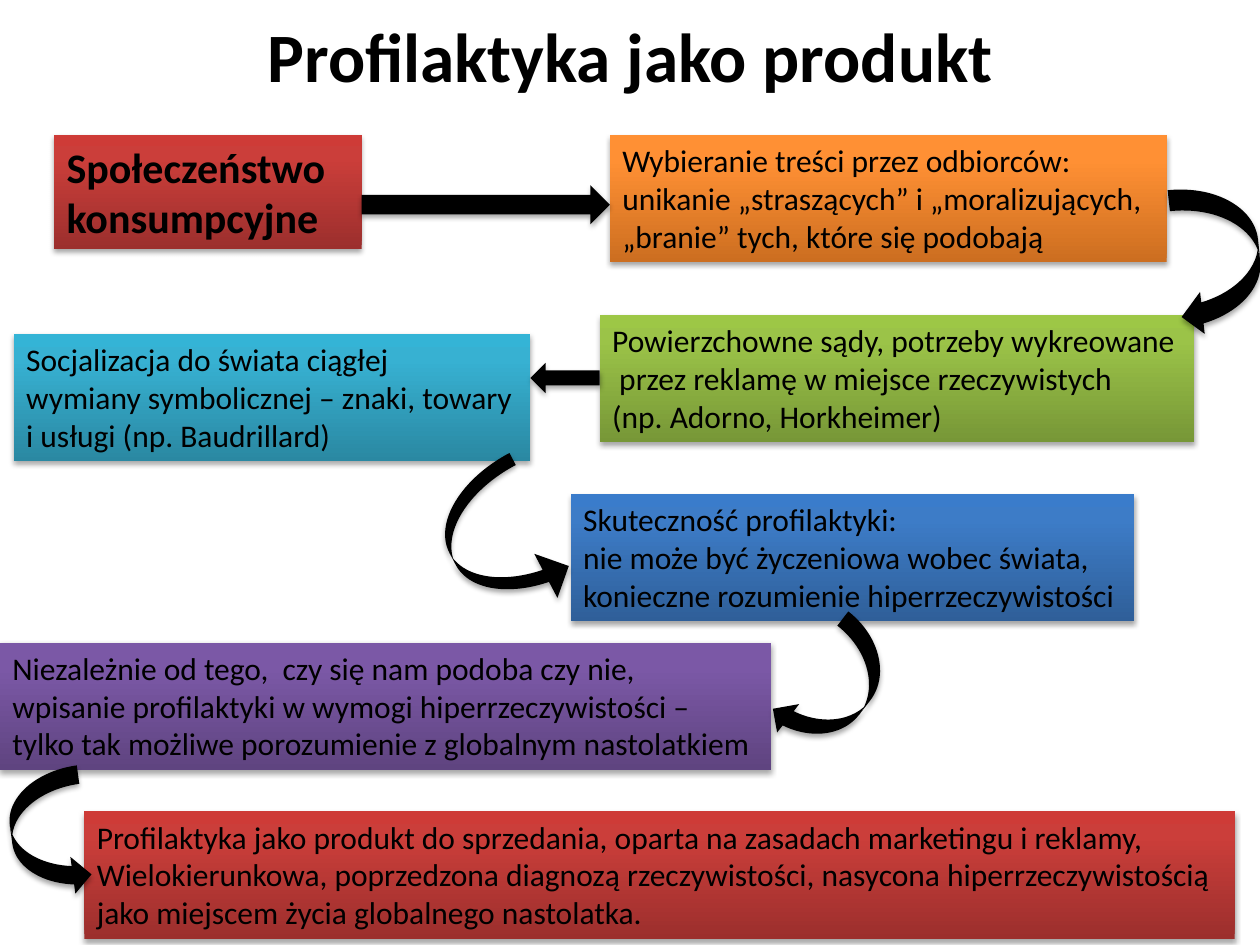
import copy

import pptx
import pptx.dml.color
import pptx.enum.shapes
import pptx.enum.text
import pptx.util
from lxml import etree
from pptx.oxml.ns import qn

Inches = pptx.util.Inches
Pt = pptx.util.Pt
RGBColor = pptx.dml.color.RGBColor
MSO_SHAPE = pptx.enum.shapes.MSO_SHAPE
MSO_ANCHOR = pptx.enum.text.MSO_ANCHOR
MSO_AUTO_SIZE = pptx.enum.text.MSO_AUTO_SIZE
PP_ALIGN = pptx.enum.text.PP_ALIGN

FONT = "Calibri"
BLACK = RGBColor(0x00, 0x00, 0x00)

# Gradients from bottom to top, with stops at STOP_POSITIONS
STOP_POSITIONS = (0, 0.8, 1)
RED = (RGBColor(0x9C, 0x2F, 0x2D), RGBColor(0xCB, 0x3E, 0x3A), RGBColor(0xCE, 0x3B, 0x37))
ORANGE = (RGBColor(0xCC, 0x6E, 0x20), RGBColor(0xFF, 0x90, 0x34), RGBColor(0xFF, 0x91, 0x36))
GREEN = (RGBColor(0x77, 0x97, 0x37), RGBColor(0x9B, 0xC3, 0x48), RGBColor(0x9D, 0xC7, 0x46))
TEAL = (RGBColor(0x2A, 0x88, 0xA2), RGBColor(0x37, 0xB1, 0xD2), RGBColor(0x34, 0xB4, 0xD6))
BLUE = (RGBColor(0x2F, 0x5F, 0x99), RGBColor(0x3D, 0x7C, 0xC7), RGBColor(0x3A, 0x7C, 0xCB))
PURPLE = (RGBColor(0x5F, 0x44, 0x80), RGBColor(0x7B, 0x58, 0xA6), RGBColor(0x7C, 0x57, 0xA8))

# Statements: box (left, top, width, height), gradient, lines
STATEMENTS = [
    ((4.84, 1.07, 4.42, 1.01), ORANGE, [
        "Wybieranie treści przez odbiorców:",
        "unikanie „straszących” i „moralizujących,",
        "„branie” tych, które się podobają"]),
    ((4.76, 2.5, 4.72, 1.01), GREEN, [
        "Powierzchowne sądy, potrzeby wykreowane",
        " przez reklamę w miejsce rzeczywistych",
        "(np. Adorno, Horkheimer)"]),
    ((0.11, 2.65, 4.1, 1.01), TEAL, [
        "Socjalizacja do świata ciągłej",
        "wymiany symbolicznej – znaki, towary",
        "i usługi (np. Baudrillard)"]),
    ((4.53, 3.92, 4.47, 1.01), BLUE, [
        "Skuteczność profilaktyki:",
        "nie może być życzeniowa wobec świata,",
        "konieczne rozumienie hiperrzeczywistości"]),
    ((0, 5.1, 6.12, 1.01), PURPLE, [
        "Niezależnie od tego,  czy się nam podoba czy nie,",
        "wpisanie profilaktyki w wymogi hiperrzeczywistości –",
        "tylko tak możliwe porozumienie z globalnym nastolatkiem"]),
    ((0.67, 6.44, 9.13, 1.01), RED, [
        "Profilaktyka jako produkt do sprzedania, oparta na zasadach marketingu i reklamy,",
        "Wielokierunkowa, poprzedzona diagnozą rzeczywistości, nasycona hiperrzeczywistością",
        "jako miejscem życia globalnego nastolatka."]),
]

# Arrows: preset, box, rotation in degrees, first adjustment (None keeps the default)
ARROWS = [
    (MSO_SHAPE.RIGHT_ARROW, (2.87, 1.47, 1.97, 0.31), 0, None),
    (MSO_SHAPE.CURVED_LEFT_ARROW, (9.33, 1.47, 0.67, 1.18), 353.7, None),
    (MSO_SHAPE.LEFT_ARROW, (4.21, 2.88, 0.55, 0.24), 0, None),
    (MSO_SHAPE.CURVED_RIGHT_ARROW, (3.58, 3.71, 0.79, 1.21), 332.3, 0.136),
    (MSO_SHAPE.CURVED_LEFT_ARROW, (6.33, 4.91, 0.57, 1.12), 37.8, None),
    (MSO_SHAPE.CURVED_RIGHT_ARROW, (0.09, 6.11, 0.59, 1.02), 352.3, None),
]


def add_shadow(shape):
    """Give the shape a soft black shadow straight below it."""
    shape.shadow.inherit = False
    effects = shape._element.spPr.find(qn("a:effectLst"))
    shadow = etree.SubElement(effects, qn("a:outerShdw"), blurRad=str(Pt(3.1)),
                              dist=str(Pt(1.8)), dir="5400000", rotWithShape="0")
    color = etree.SubElement(shadow, qn("a:srgbClr"), val=str(BLACK))
    etree.SubElement(color, qn("a:alpha"), val="35000")


def fill_gradient(shape, colors):
    """Fill the shape with a three-stop gradient rising from its bottom."""
    shape.fill.gradient()
    shape.fill.gradient_angle = 90
    stop_list = shape._element.spPr.find(qn("a:gradFill")).find(qn("a:gsLst"))
    stop_list.append(copy.deepcopy(stop_list[-1]))
    for stop, position, color in zip(shape.fill.gradient_stops, STOP_POSITIONS, colors):
        stop.position = position
        stop.color.rgb = color


def write_lines(text_frame, lines, size, bold, alignment):
    text_frame.text = "\n".join(lines)
    for paragraph in text_frame.paragraphs:
        paragraph.alignment = alignment
        paragraph.font.name = FONT
        paragraph.font.size = Pt(size)
        paragraph.font.bold = bold
        paragraph.font.color.rgb = BLACK


def add_title(slide, box, text):
    shape = slide.shapes.add_textbox(*map(Inches, box))
    text_frame = shape.text_frame
    text_frame.word_wrap = True
    text_frame.vertical_anchor = MSO_ANCHOR.MIDDLE
    write_lines(text_frame, [text], 39.6, True, PP_ALIGN.CENTER)


def add_statement(slide, box, colors, lines, size=18, bold=False, wrap=False):
    shape = slide.shapes.add_shape(MSO_SHAPE.RECTANGLE, *map(Inches, box))
    fill_gradient(shape, colors)
    shape.line.fill.background()
    add_shadow(shape)
    text_frame = shape.text_frame
    text_frame.word_wrap = wrap
    text_frame.auto_size = MSO_AUTO_SIZE.SHAPE_TO_FIT_TEXT
    text_frame.vertical_anchor = MSO_ANCHOR.TOP
    write_lines(text_frame, lines, size, bold, PP_ALIGN.LEFT)


def add_arrow(slide, preset, box, rotation, adjustment):
    shape = slide.shapes.add_shape(preset, *map(Inches, box))
    shape.rotation = rotation
    if adjustment is not None:
        shape.adjustments[0] = adjustment
    shape.fill.solid()
    shape.fill.fore_color.rgb = BLACK
    shape.line.fill.background()
    add_shadow(shape)


def main():
    presentation = pptx.Presentation()
    presentation.slide_width = Inches(10)
    presentation.slide_height = Inches(7.5)
    slide = presentation.slides.add_slide(presentation.slide_layouts[6])

    add_title(slide, (0.5, 0.13, 9, 0.61), "Profilaktyka jako produkt")

    # Starting point of the chain, then the statements that follow from it
    add_statement(slide, (0.43, 1.07, 2.44, 0.91), RED, ["Społeczeństwo konsumpcyjne"],
                  size=24, bold=True, wrap=True)
    for box, colors, lines in STATEMENTS:
        add_statement(slide, box, colors, lines)

    # Arrows leading from each statement to the next
    for preset, box, rotation, adjustment in ARROWS:
        add_arrow(slide, preset, box, rotation, adjustment)

    presentation.save("out.pptx")


if __name__ == "__main__":
    main()
